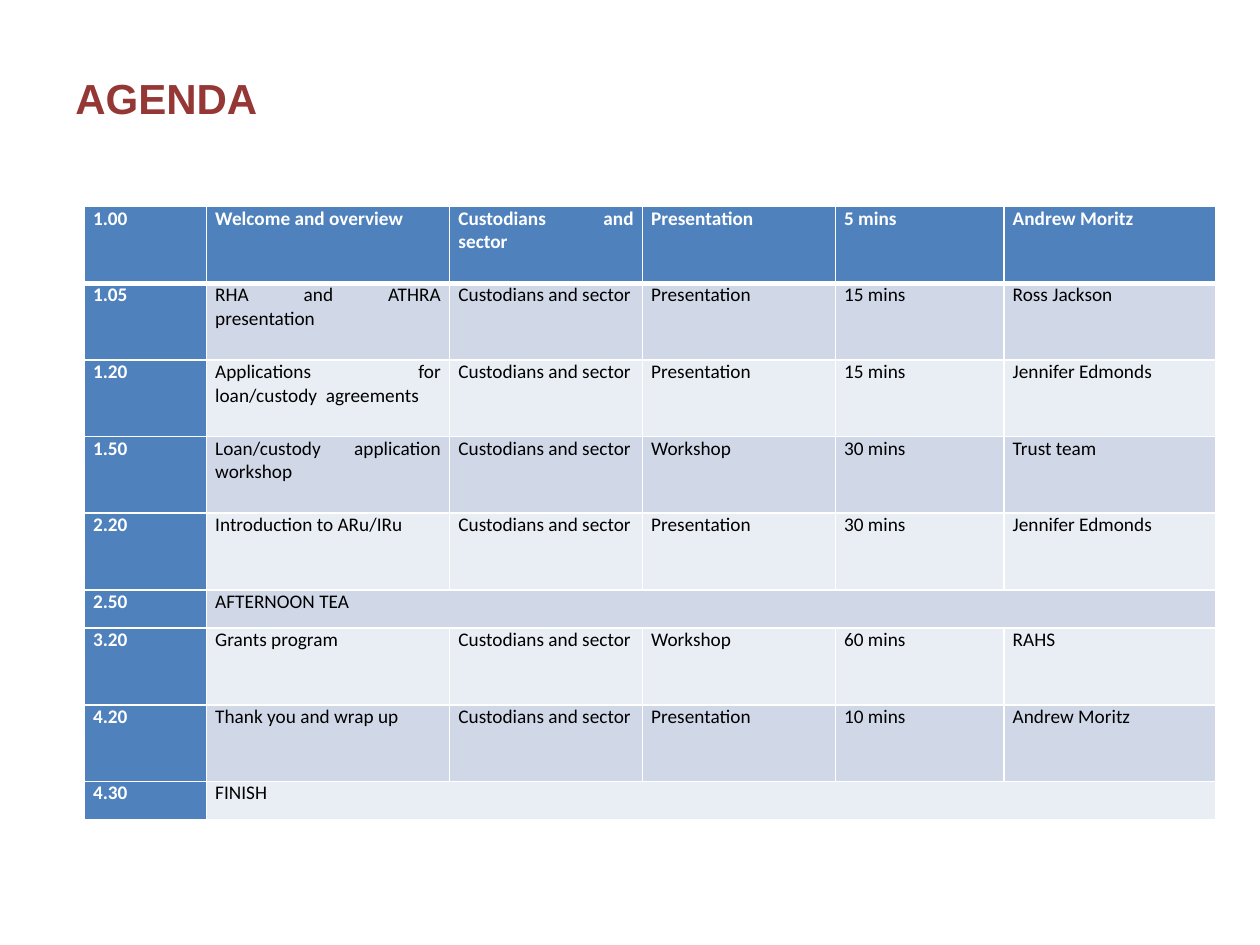
from typing import NamedTuple

from lxml.etree import SubElement
from pptx import Presentation
from pptx.dml.color import RGBColor
from pptx.enum.text import MSO_ANCHOR as Anchor, PP_ALIGN as Align
from pptx.oxml.ns import qn
from pptx.slide import Slide
from pptx.table import _Cell as Cell
from pptx.text.text import _Paragraph as Paragraph
from pptx.util import Pt

WHITE, BLACK, RED = "FFFFFF", "000000", "953735"
BLUE, BANDS = "4F81BD", ("E9EDF4", "D0D8E8")
COLUMN_WIDTHS = (69.8, 139, 110.2, 110.2, 96.4, 121)
SESSION_HEIGHT, BREAK_HEIGHT = 43.8, 21.9
THIN, THICK = 1, 3


class Session(NamedTuple):
    time: str
    topic: str
    form: str = ""
    length: str = ""
    speaker: str = ""
    audience: str = "Custodians and sector"

    @property
    def is_break(self) -> bool:
        return not self.form

    @property
    def texts(self) -> tuple[str, ...]:
        if self.is_break:
            return self.time, self.topic
        return (self.time, self.topic, self.audience,
                self.form, self.length, self.speaker)


AGENDA = (
    Session("1.00", "Welcome and overview", "Presentation", "5 mins", "Andrew Moritz"),
    Session("1.05", "RHA and ATHRA presentation", "Presentation", "15 mins", "Ross Jackson"),
    Session("1.20", "Applications for loan/custody  agreements", "Presentation",
            "15 mins", "Jennifer Edmonds"),
    Session("1.50", "Loan/custody application workshop", "Workshop", "30 mins", "Trust team"),
    Session("2.20", "Introduction to ARu/IRu", "Presentation", "30 mins", "Jennifer Edmonds"),
    Session("2.50", "AFTERNOON TEA"),
    Session("3.20", "Grants program", "Workshop", "60 mins", "RAHS"),
    Session("4.20", "Thank you and wrap up", "Presentation", "10 mins", "Andrew Moritz"),
    Session("4.30", "FINISH"),
)


def color(value: str) -> RGBColor:
    return RGBColor.from_string(value)


def add_span(para: Paragraph, text: str, font: str, size: float,
             tint: str, bold: bool) -> None:
    span = para.add_run()
    span.text = text
    span.font.name = font
    span.font.size = Pt(size)
    span.font.bold = bold
    span.font.color.rgb = color(tint)


def add_borders(cell: Cell, top: float, bottom: float) -> None:
    """Draw white cell borders; call before filling, as the schema wants lines first."""
    properties = cell._tc.get_or_add_tcPr()
    for side, width in (("L", THIN), ("R", THIN), ("T", top), ("B", bottom)):
        line = SubElement(properties, qn(f"a:ln{side}"), w=str(Pt(width)))
        SubElement(SubElement(line, qn("a:solidFill")), qn("a:srgbClr"), val=WHITE)


def style_cell(cell: Cell, row: int, fill: str) -> None:
    add_borders(cell, THICK if row == 1 else THIN, THICK if row == 0 else THIN)
    cell.fill.solid()
    cell.fill.fore_color.rgb = color(fill)
    cell.margin_left = cell.margin_right = Pt(5)
    cell.margin_top = cell.margin_bottom = Pt(0)


def add_title(slide: Slide, text: str) -> None:
    box = slide.shapes.add_textbox(Pt(36), Pt(21.6), Pt(648), Pt(68.4))
    frame = box.text_frame
    frame.word_wrap = True
    frame.vertical_anchor = Anchor.MIDDLE
    add_span(frame.paragraphs[0], text, "Arial", 24, RED, True)


def add_agenda(slide: Slide, sessions: tuple[Session, ...]) -> None:
    heights = [BREAK_HEIGHT if session.is_break else SESSION_HEIGHT
               for session in sessions]
    table = slide.shapes.add_table(
        len(sessions), len(COLUMN_WIDTHS), Pt(48.2), Pt(118.1),
        Pt(sum(COLUMN_WIDTHS)), Pt(sum(heights))).table
    table.first_row = table.horz_banding = False
    for column, width in zip(table.columns, COLUMN_WIDTHS):
        column.width = Pt(width)
    for row, (session, height) in enumerate(zip(sessions, heights)):
        table.rows[row].height = Pt(height)
        for column in range(len(COLUMN_WIDTHS)):
            is_heading = row == 0 or column == 0
            style_cell(table.cell(row, column), row,
                       BLUE if is_heading else BANDS[row % 2])
        if session.is_break:
            table.cell(row, 1).merge(table.cell(row, len(COLUMN_WIDTHS) - 1))
        for column, text in enumerate(session.texts):
            is_heading = row == 0 or column == 0
            para = table.cell(row, column).text_frame.paragraphs[0]
            para.alignment = Align.JUSTIFY
            add_span(para, text, "Calibri", 11,
                     WHITE if is_heading else BLACK, is_heading)


def main() -> None:
    deck = Presentation()
    deck.slide_width, deck.slide_height = Pt(720), Pt(540)
    page = deck.slides.add_slide(deck.slide_layouts[6])
    add_title(page, "AGENDA")
    add_agenda(page, AGENDA)
    deck.save("out.pptx")


if __name__ == "__main__":
    main()
